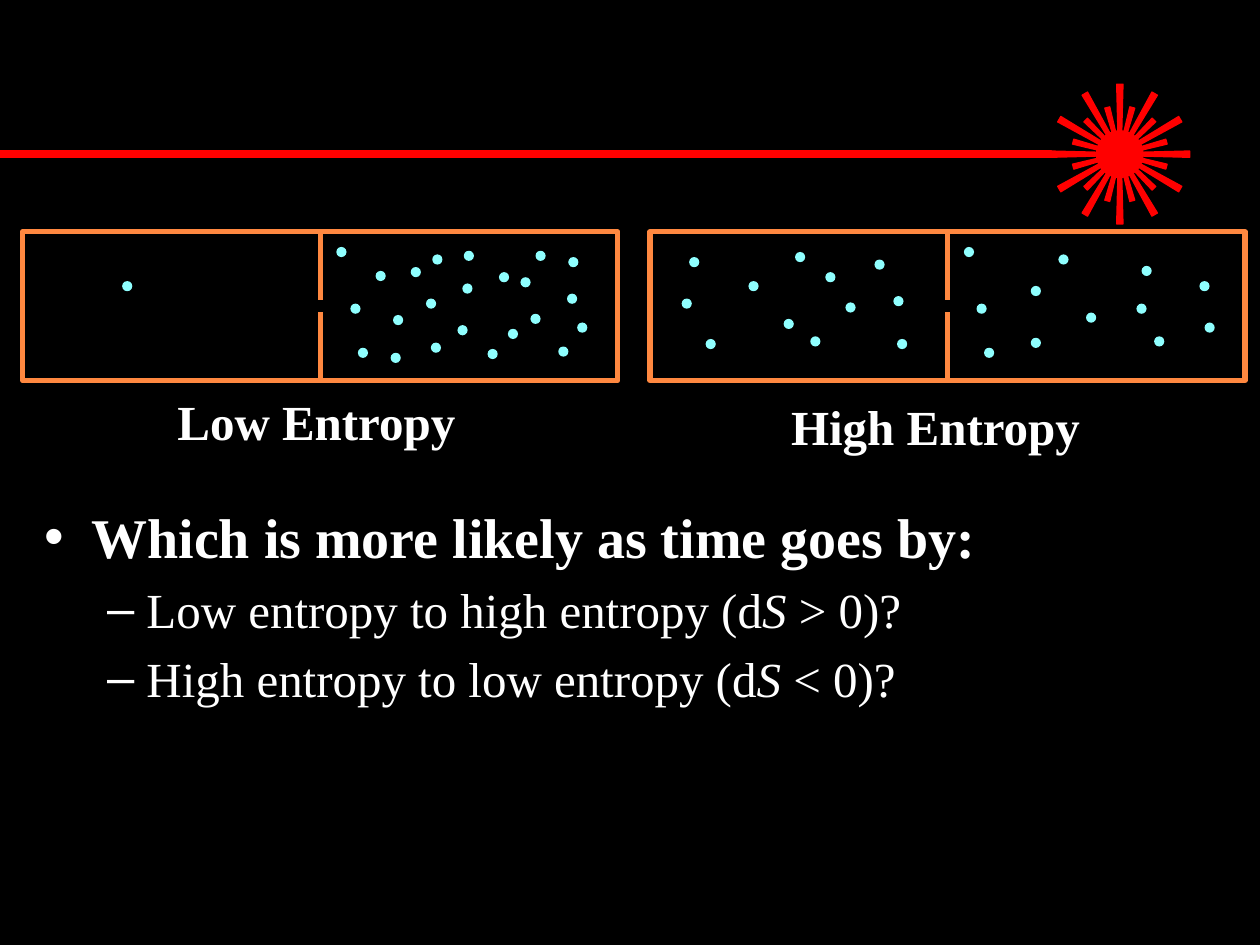
import math
from dataclasses import dataclass

from lxml import etree
from pptx import Presentation
from pptx import util as u
from pptx.dml import color as c
from pptx.enum import shapes, text
from pptx.oxml import ns


@dataclass(frozen=True)
class Theme:
    background: c.RGBColor = c.RGBColor(0x00, 0x00, 0x00)
    text: c.RGBColor = c.RGBColor(0xFF, 0xFF, 0xFF)
    burst: c.RGBColor = c.RGBColor(0xFF, 0x00, 0x00)
    wall: c.RGBColor = c.RGBColor(0xFF, 0x88, 0x40)
    particle: c.RGBColor = c.RGBColor(0x8F, 0xFF, 0xFF)
    font: str = "Times New Roman"
    question_size: int = 32
    detail_size: int = 28
    burst_line: float = 0.75
    wall_line: float = 3


THEME = Theme()
CHAMBER_TOP, CHAMBER_WIDTH, CHAMBER_HEIGHT = 132.5, 340, 85
PARTITION_LENGTH = 39
PARTICLE_SIZE = 5.8
BURST_X, BURST_Y = 639.9, 88.1

LOW_PARTICLES = [
    (69.8, 160.6), (264.2, 162), (223.2, 201.6), (297.4, 158.4),
    (329.8, 184.3), (247, 145.4), (200.2, 173.5), (319, 198),
    (204.5, 198.7), (234.7, 152.6), (224.6, 180), (261.4, 185.8),
    (214.6, 154.8), (278.6, 199.4), (246.2, 195.8), (243.4, 170.6),
    (303.1, 179.3), (324, 167.8), (265, 143.3), (285.1, 155.5),
    (306, 143.3), (324.7, 146.9), (290.2, 187.9), (192.2, 141.1),
]
HIGH_PARTICLES = [
    (427.7, 160.6), (463, 192.2), (389.5, 170.6), (471.6, 155.5),
    (688.3, 184.3), (604.8, 145.4), (558, 173.5), (659.5, 192.2),
    (562.3, 198.7), (454.3, 144), (483.1, 172.8), (620.6, 178.6),
    (393.8, 146.9), (512.6, 193.7), (589, 193), (589, 163.4),
    (403.2, 193.7), (685.4, 160.6), (499.7, 148.3), (649.4, 173.5),
    (652.3, 151.9), (510.5, 169.2), (447.8, 182.2), (550.8, 141.1),
]
QUESTION = "Which is more likely as time goes by:"
OPTIONS = [
    ("Low entropy to high entropy (d", "S", " > 0)?"),
    ("High entropy to low entropy (d", "S ", "< 0)?"),
]


def write_text(paragraph, content, size=THEME.detail_size, bold=False, italic=False):
    run = paragraph.add_run()
    run.text = content
    run.font.name = THEME.font
    run.font.size = u.Pt(size)
    run.font.bold = bold
    run.font.italic = italic
    run.font.color.rgb = THEME.text


def paint(shape, fill=None, line=None, line_width=0):
    shape.shadow.inherit = False
    if fill is None:
        shape.fill.background()
    else:
        shape.fill.solid()
        shape.fill.fore_color.rgb = fill
    if line is None:
        shape.line.fill.background()
    else:
        shape.line.color.rgb = line
        shape.line.width = u.Pt(line_width)


def add_preset(group, kind, left, top, width, height, **style):
    shape = group.shapes.add_shape(
        kind, u.Pt(left), u.Pt(top), u.Pt(width), u.Pt(height))
    paint(shape, **style)
    return shape


def add_ray(group, angle, inner, outer, inner_width, outer_width, **style):
    sine, cosine = math.sin(math.radians(angle)), math.cos(math.radians(angle))
    corners = [(-outer_width / 2, outer), (outer_width / 2, outer),
               (inner_width / 2, inner), (-inner_width / 2, inner)]
    points = [(u.Pt(BURST_X + across * cosine + along * sine),
               u.Pt(BURST_Y + across * sine - along * cosine))
              for across, along in corners]
    builder = group.shapes.build_freeform(*points[0])
    builder.add_line_segments(points[1:], close=True)
    paint(builder.convert_to_shape(), **style)


def add_burst(slide):
    group = slide.shapes.add_group_shape()
    style = dict(fill=THEME.burst, line=THEME.burst, line_width=THEME.burst_line)
    diameter = 26.6
    add_preset(group, shapes.MSO_SHAPE.OVAL, BURST_X - diameter / 2,
               BURST_Y - diameter / 2, diameter, diameter, **style)
    for angle in range(0, 360, 30):
        add_ray(group, angle, 10.7, 39.9, 2.1, 3.6, **style)
        add_ray(group, angle + 15, 10.3, 27.6, 1.9, 2.9, **style)
    add_preset(group, shapes.MSO_SHAPE.RECTANGLE, 0, 86.3, 601, 3.6, **style)


def add_partition(group, x, start, end):
    connector = group.shapes.add_connector(
        shapes.MSO_CONNECTOR.STRAIGHT, u.Pt(x), u.Pt(start), u.Pt(x), u.Pt(end))
    connector.line.color.rgb = THEME.wall
    connector.line.width = u.Pt(THEME.wall_line)
    properties = connector._element.find(ns.qn("p:spPr"))
    etree.SubElement(properties, ns.qn("a:effectLst"))
    return connector


def add_chamber(slide, left, particles):
    group = slide.shapes.add_group_shape()
    frame = add_preset(group, shapes.MSO_SHAPE.RECTANGLE, left, CHAMBER_TOP,
                       CHAMBER_WIDTH, CHAMBER_HEIGHT,
                       line=THEME.wall, line_width=THEME.wall_line)
    middle, bottom = left + CHAMBER_WIDTH / 2, CHAMBER_TOP + CHAMBER_HEIGHT
    upper = add_partition(group, middle, CHAMBER_TOP, CHAMBER_TOP + PARTITION_LENGTH)
    upper.begin_connect(frame, 0)
    lower = add_partition(group, middle, bottom - PARTITION_LENGTH, bottom)
    lower.end_connect(frame, 2)
    for x, y in particles:
        add_preset(group, shapes.MSO_SHAPE.OVAL, x, y, PARTICLE_SIZE,
                   PARTICLE_SIZE, fill=THEME.particle)


def add_caption(slide, content, left, top, width):
    box = slide.shapes.add_textbox(u.Pt(left), u.Pt(top), u.Pt(width), u.Pt(41))
    box.text_frame.word_wrap = True
    box.text_frame.auto_size = text.MSO_AUTO_SIZE.SHAPE_TO_FIT_TEXT
    write_text(box.text_frame.paragraphs[0], content, bold=True)


def fill_body(body):
    body.left, body.top = u.Pt(18), u.Pt(283.5)
    body.width, body.height = u.Pt(702), u.Pt(238.5)
    frame = body.text_frame
    write_text(frame.paragraphs[0], QUESTION, size=THEME.question_size, bold=True)
    for before, symbol, after in OPTIONS:
        paragraph = frame.add_paragraph()
        paragraph.level = 1
        write_text(paragraph, before)
        write_text(paragraph, symbol, italic=True)
        write_text(paragraph, after)


def main():
    presentation = Presentation()
    presentation.slide_width, presentation.slide_height = u.Pt(720), u.Pt(540)
    slide = presentation.slides.add_slide(presentation.slide_layouts[1])
    slide.background.fill.solid()
    slide.background.fill.fore_color.rgb = THEME.background
    title = slide.shapes.title._element
    title.getparent().remove(title)
    fill_body(slide.placeholders[1])
    add_burst(slide)
    add_chamber(slide, 13, LOW_PARTICLES)
    add_chamber(slide, 371.5, HIGH_PARTICLES)
    add_caption(slide, "Low Entropy", 94.3, 220.3, 176.4)
    add_caption(slide, "High Entropy", 445, 223.2, 198.7)
    presentation.save("out.pptx")


if __name__ == "__main__":
    main()
